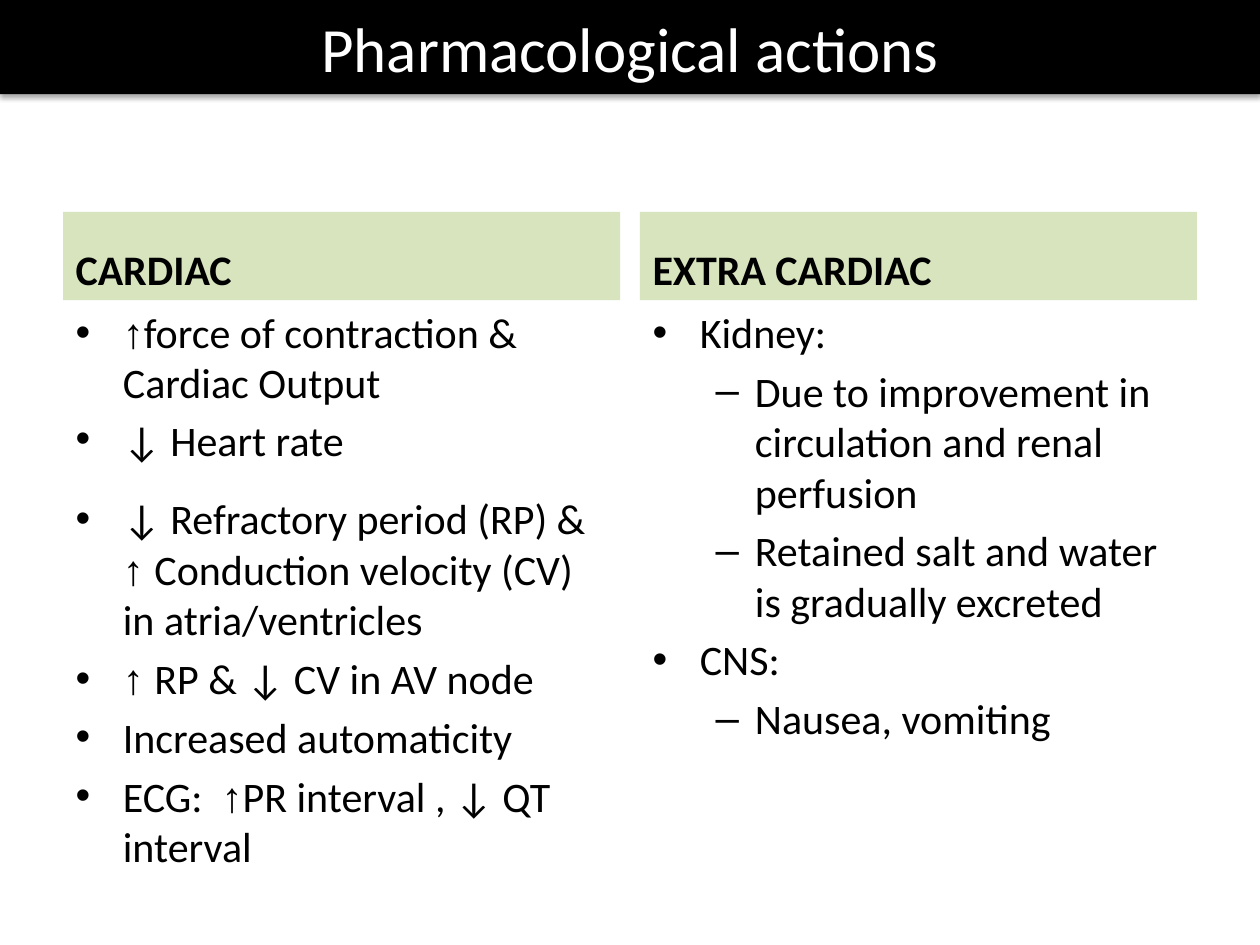
from lxml import etree
from pptx import Presentation
from pptx.dml.color import RGBColor
from pptx.enum.text import MSO_ANCHOR as Anchor, MSO_AUTO_SIZE as AutoSize, PP_ALIGN as Align
from pptx.util import Cm, Pt

BLACK, WHITE, GREEN = "000000", "FFFFFF", "D7E4BD"
COLUMN_LEFTS = (1.27, 12.9)
COLUMN_WIDTH = 11.23
HEADING_TOP, HEADING_HEIGHT, LIST_HEIGHT = 4.27, 1.78, 10.97
DRAWING_NS = "http://schemas.openxmlformats.org/drawingml/2006/main"

TITLE_FONT = {"name": "Calibri", "size": Pt(36), "bold": False}
HEADING_FONT = {"name": "Calibri", "size": Pt(24), "bold": True}
BODY_FONT = {"name": "Calibri", "size": Pt(24), "bold": False}
ARROW_FONT = {**BODY_FONT, "name": "Times New Roman"}
TIGHT = {"line_spacing": 0.7, "space_before": Pt(12), "space_after": Pt(12)}

# Each list entry: level, runs, paragraph format
COLUMNS = [
    ("CARDIAC", [
        (0, ["↑", "force of contraction & Cardiac Output"], {}),
        (0, ["↓ Heart rate"], TIGHT),
        (0, ["↓ Refractory period (RP) & ", "↑ ",
             "Conduction velocity (CV) in atria/ventricles"], {}),
        (0, ["↑ ", "RP & ↓ CV in AV node"], {}),
        (0, ["Increased automaticity"], {}),
        (0, ["ECG:  ", "↑", "PR interval , ↓ QT interval"], {}),
    ]),
    ("EXTRA CARDIAC", [
        (0, ["Kidney:"], {}),
        (1, ["Due to improvement in circulation and renal perfusion"], {}),
        (1, ["Retained salt and water is gradually excreted"], {}),
        (0, ["CNS:"], {}),
        (1, ["Nausea, vomiting"], {}),
    ]),
]


def color(hex_value):
    return RGBColor.from_string(hex_value)


def apply_format(target, values):
    for name, value in values.items():
        setattr(target, name, value)


def place(shape, left, top, width, height, anchor, fill=None):
    apply_format(shape, {"left": Cm(left), "top": Cm(top),
                         "width": Cm(width), "height": Cm(height)})
    apply_format(shape.text_frame, {"word_wrap": True, "auto_size": AutoSize.NONE,
                                    "vertical_anchor": anchor})
    if fill:
        shape.fill.solid()
        shape.fill.fore_color.rgb = color(fill)


def add_run(paragraph, text, font, hex_value=BLACK):
    run = paragraph.add_run()
    run.text = text
    apply_format(run.font, font)
    run.font.color.rgb = color(hex_value)


def add_shadow(shape):
    effects = etree.fromstring(
        f'<a:effectLst xmlns:a="{DRAWING_NS}">'
        f'<a:outerShdw blurRad="{Pt(3.1)}" dist="{Pt(1.8)}" dir="5400000" rotWithShape="0">'
        f'<a:srgbClr val="{BLACK}"><a:alpha val="35000"/></a:srgbClr>'
        '</a:outerShdw></a:effectLst>')
    shape.element.spPr.append(effects)


def fill_title(shape, text):
    place(shape, 0, 0, 25.4, 1.9, Anchor.MIDDLE, BLACK)
    add_shadow(shape)
    paragraph = shape.text_frame.paragraphs[0]
    paragraph.alignment = Align.CENTER
    add_run(paragraph, text, TITLE_FONT, WHITE)


def fill_heading(shape, left, text):
    place(shape, left, HEADING_TOP, COLUMN_WIDTH, HEADING_HEIGHT, Anchor.BOTTOM, GREEN)
    add_run(shape.text_frame.paragraphs[0], text, HEADING_FONT)


def fill_list(shape, left, entries):
    place(shape, left, HEADING_TOP + HEADING_HEIGHT, COLUMN_WIDTH, LIST_HEIGHT, Anchor.TOP)
    frame = shape.text_frame
    for index, (level, runs, spacing) in enumerate(entries):
        paragraph = frame.add_paragraph() if index else frame.paragraphs[0]
        apply_format(paragraph, {"level": level, **spacing})
        for text in runs:
            add_run(paragraph, text, ARROW_FONT if text.startswith("↑") else BODY_FONT)


def main():
    presentation = Presentation()
    presentation.slide_width, presentation.slide_height = Cm(25.4), Cm(19.05)
    # The Comparison layout has a title and two heading/list pairs
    slide = presentation.slides.add_slide(presentation.slide_layouts[4])
    boxes = {box.placeholder_format.idx: box for box in slide.placeholders}

    # Title band
    fill_title(boxes[0], "Pharmacological actions")

    # Two columns
    for number, (left, (heading, entries)) in enumerate(zip(COLUMN_LEFTS, COLUMNS)):
        fill_heading(boxes[2 * number + 1], left, heading)
        fill_list(boxes[2 * number + 2], left, entries)

    # Unused date, footer and number boxes
    for index, box in boxes.items():
        if index > 4:
            box.element.getparent().remove(box.element)
    presentation.save("out.pptx")


if __name__ == "__main__":
    main()
